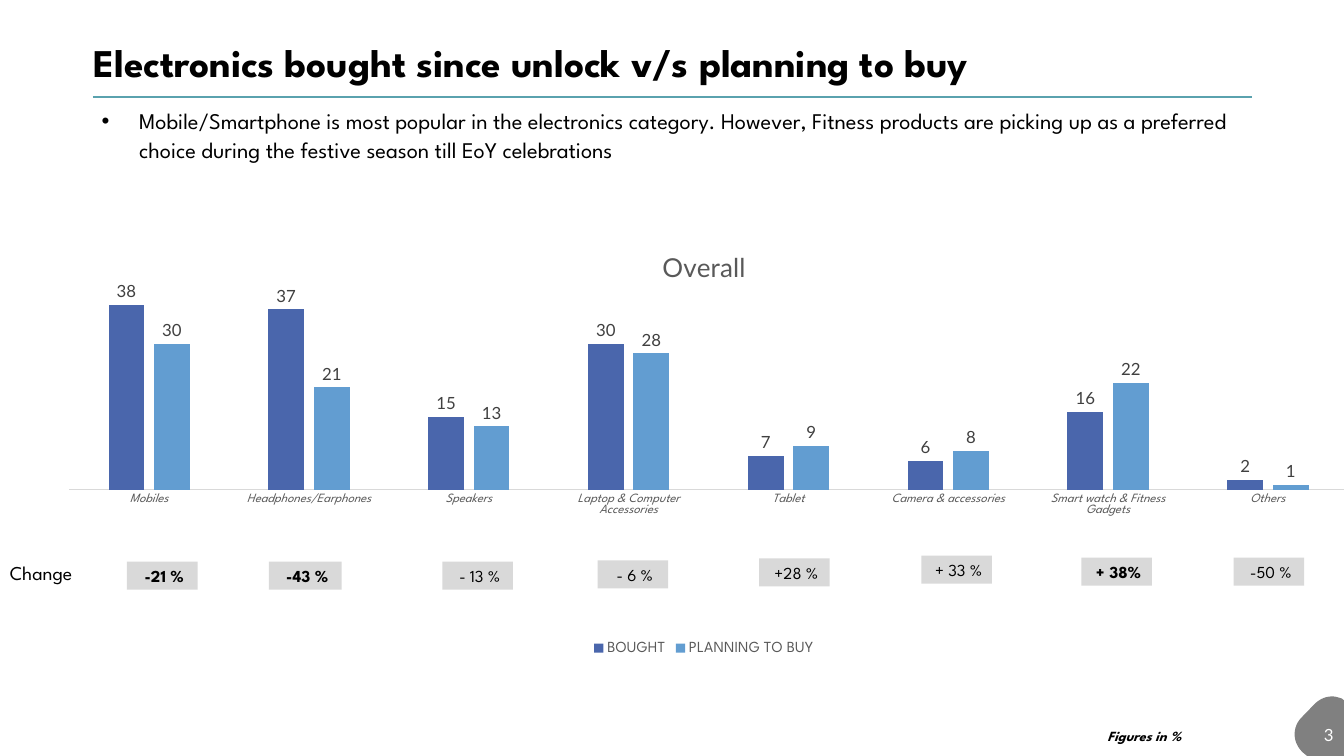
from lxml.etree import SubElement
from pptx import Presentation
from pptx.chart.data import CategoryChartData
from pptx.dml.color import RGBColor
from pptx.enum.chart import XL_CHART_TYPE, XL_LABEL_POSITION, XL_LEGEND_POSITION, XL_TICK_MARK
from pptx.enum.shapes import MSO_CONNECTOR, MSO_SHAPE
from pptx.enum.text import MSO_ANCHOR, PP_ALIGN
from pptx.oxml import parse_xml
from pptx.oxml.ns import nsdecls, qn
from pptx.util import Cm, Pt

COLOURS = {
    "text": "000000",
    "white": "FFFFFF",
    "rule": "5AA2AE",
    "corner": "808080",
    "badge": "D9D9D9",
    "axis": "D9D9D9",
    "muted": "595959",
    "label": "404040",
    "bought": "4A66AC",
    "planning": "629DD1",
}
HEADING_FONT = "League Spartan"
NUMBER_FONT = "Lato"

CATEGORIES = [
    "Mobiles", "Headphones/Earphones", "Speakers", "Laptop & Computer Accessories",
    "Tablet", "Camera & accessories", "Smart watch & Fitness Gadgets", "Others",
]
SERIES = [
    ("BOUGHT", (38, 37, 15, 30, 7, 6, 16, 2), "bought"),
    ("PLANNING TO BUY", (30, 21, 13, 28, 9, 8, 22, 1), "planning"),
]
CHANGES = [
    ("-21 %", 3.2, 14.15, 1.78, True),
    ("-43 %", 6.78, 14.15, 1.83, True),
    ("- 13 %", 11.15, 14.15, 1.78, False),
    ("- 6 %", 15.06, 14.12, 1.78, False),
    ("+28 %", 19.13, 14.07, 1.78, False),
    ("+ 33 %", 23.22, 14, 1.78, False),
    ("+ 38%", 27.25, 14.05, 1.78, True),
    ("-50 %", 31.09, 14.05, 1.78, False),
]
CORNER_START = (33.58, 17.55)
CORNER_SEGMENTS = [
    [(33.66, 17.55), (33.73, 17.58), (33.81, 17.6)],
    [(33.87, 17.65)],
    [(33.87, 19.05)],
    [(32.94, 19.05)],
    [(32.82, 18.95)],
    [(32.56, 18.69), (32.56, 18.31), (32.82, 18.06)],
    [(33.12, 17.75)],
    [(33.25, 17.62), (33.4, 17.55), (33.58, 17.55)],
]


def colour(name):
    return RGBColor.from_string(COLOURS[name])


def style_font(font, size, name="text", family=HEADING_FONT, bold=False, italic=False):
    font.size = Pt(size)
    font.name = family
    font.bold = bold
    font.italic = italic
    font.color.rgb = colour(name)


def add_run(paragraph, text, size, **style):
    run = paragraph.add_run()
    run.text = text
    style_font(run.font, size, **style)


def add_text(slide, text, box, size, anchor=MSO_ANCHOR.TOP, align=PP_ALIGN.LEFT, **style):
    shape = slide.shapes.add_textbox(*map(Cm, box))
    frame = shape.text_frame
    frame.word_wrap = True
    frame.vertical_anchor = anchor
    paragraph = frame.paragraphs[0]
    paragraph.alignment = align
    add_run(paragraph, text, size, **style)
    return paragraph


def add_bullet(paragraph, indent):
    properties = paragraph._p.get_or_add_pPr()
    properties.set("marL", str(Cm(indent)))
    properties.set("indent", str(-Cm(indent)))
    SubElement(properties, qn("a:buFont")).set("typeface", "Arial")
    SubElement(properties, qn("a:buChar")).set("char", "•")


def add_rule(slide, left, right, top):
    connector = slide.shapes.add_connector(
        MSO_CONNECTOR.STRAIGHT, Cm(left), Cm(top), Cm(right), Cm(top))
    connector.line.color.rgb = colour("rule")
    connector.line.width = Pt(1.5)
    SubElement(connector._element.spPr, qn("a:effectLst"))


def paint(shape, name):
    shape.shadow.inherit = False
    shape.fill.solid()
    shape.fill.fore_color.rgb = colour(name)
    shape.line.fill.background()


def curve_points(start, first, second, end, steps=12):
    for step in range(1, steps + 1):
        t = step / steps
        weights = ((1 - t) ** 3, 3 * t * (1 - t) ** 2, 3 * t ** 2 * (1 - t), t ** 3)
        yield tuple(
            sum(weight * value for weight, value in zip(weights, values))
            for values in zip(start, first, second, end))


def add_corner(slide):
    points = [CORNER_START]
    for segment in CORNER_SEGMENTS:
        points.extend(curve_points(points[-1], *segment) if len(segment) == 3 else segment)
    vertices = [(Cm(x), Cm(y)) for x, y in points]
    builder = slide.shapes.build_freeform(*vertices[0])
    builder.add_line_segments(vertices[1:], close=True)
    paint(builder.convert_to_shape(), "corner")


def add_badge(slide, text, left, top, width, bold):
    shape = slide.shapes.add_shape(
        MSO_SHAPE.RECTANGLE, Cm(left), Cm(top), Cm(width), Cm(0.71))
    paint(shape, "badge")
    frame = shape.text_frame
    frame.word_wrap = True
    frame.vertical_anchor = MSO_ANCHOR.TOP
    frame.margin_left = Cm(0.2)
    frame.margin_right = frame.margin_top = frame.margin_bottom = Cm(0.1)
    paragraph = frame.paragraphs[0]
    paragraph.alignment = PP_ALIGN.CENTER
    add_run(paragraph, text, 12, bold=bold)


def set_plot_layout(chart, left, top, width, height):
    plot_area = chart.element.find(".//" + qn("c:plotArea"))
    for layout in plot_area.findall(qn("c:layout")):
        plot_area.remove(layout)
    plot_area.insert(0, parse_xml(
        f'<c:layout {nsdecls("c")}><c:manualLayout><c:layoutTarget val="inner"/>'
        '<c:xMode val="edge"/><c:yMode val="edge"/>'
        f'<c:x val="{left}"/><c:y val="{top}"/><c:w val="{width}"/><c:h val="{height}"/>'
        '</c:manualLayout></c:layout>'))


def style_axes(chart):
    category_axis = chart.category_axis
    category_axis.major_tick_mark = XL_TICK_MARK.NONE
    category_axis.format.line.color.rgb = colour("axis")
    category_axis.format.line.width = Pt(0.75)
    style_font(category_axis.tick_labels.font, 9, name="muted", italic=True)
    value_axis = chart.value_axis
    value_axis.minimum_scale = 0
    value_axis.maximum_scale = 40
    value_axis.has_major_gridlines = False
    value_axis.visible = False


def add_column_chart(slide, box):
    data = CategoryChartData()
    data.categories = CATEGORIES
    for name, values, _ in SERIES:
        data.add_series(name, values)
    chart = slide.shapes.add_chart(
        XL_CHART_TYPE.COLUMN_CLUSTERED, *map(Cm, box), data).chart
    style_font(chart.font, 10, family=NUMBER_FONT)
    chart.has_title = True
    add_run(chart.chart_title.text_frame.paragraphs[0], "Overall", 18.6,
            name="muted", family=NUMBER_FONT)
    chart.has_legend = True
    chart.legend.position = XL_LEGEND_POSITION.BOTTOM
    chart.legend.include_in_layout = False
    style_font(chart.legend.font, 11, name="muted")
    style_axes(chart)
    plot = chart.plots[0]
    plot.gap_width = 219
    plot.overlap = -27
    plot.vary_by_categories = False
    for series, (_, _, fill) in zip(plot.series, SERIES):
        series.format.fill.solid()
        series.format.fill.fore_color.rgb = colour(fill)
        labels = series.data_labels
        labels.show_value = True
        labels.position = XL_LABEL_POSITION.OUTSIDE_END
        style_font(labels.font, 12, name="label", family=NUMBER_FONT)
    set_plot_layout(chart, 0.007, 0.153, 0.993, 0.453)


def main():
    presentation = Presentation()
    presentation.slide_width = Cm(33.87)
    presentation.slide_height = Cm(19.05)
    slide = presentation.slides.add_slide(presentation.slide_layouts[6])
    add_corner(slide)
    add_rule(slide, 2.34, 31.55, 2.44)
    add_text(slide, "3", (26.24, 18.01, 7.62, 1.02), 12, MSO_ANCHOR.MIDDLE,
             PP_ALIGN.RIGHT, name="white", family=NUMBER_FONT)
    add_column_chart(slide, (1.52, 5.77, 32.46, 10.85))
    message = add_text(
        slide,
        "Mobile/Smartphone is most popular in the electronics category. However, Fitness "
        "products are picking up as a preferred choice during the festive season till EoY "
        "celebrations",
        (2.31, 2.54, 29.72, 1.68), 16, MSO_ANCHOR.MIDDLE)
    add_bullet(message, 0.95)
    message.line_spacing = 1.07
    title = add_text(slide, "Electronics bought since unlock v/s planning to buy",
                     (2.11, 0.99, 31.75, 1.3), 28, MSO_ANCHOR.MIDDLE, bold=True)
    title.line_spacing = 0.9
    add_text(slide, "Figures in %", (27.66, 18.21, 2.59, 0.69), 10, bold=True, italic=True)
    add_text(slide, "Change", (0, 14.02, 3.99, 0.86), 14)
    for change in CHANGES:
        add_badge(slide, *change)
    presentation.save("out.pptx")


if __name__ == "__main__":
    main()
